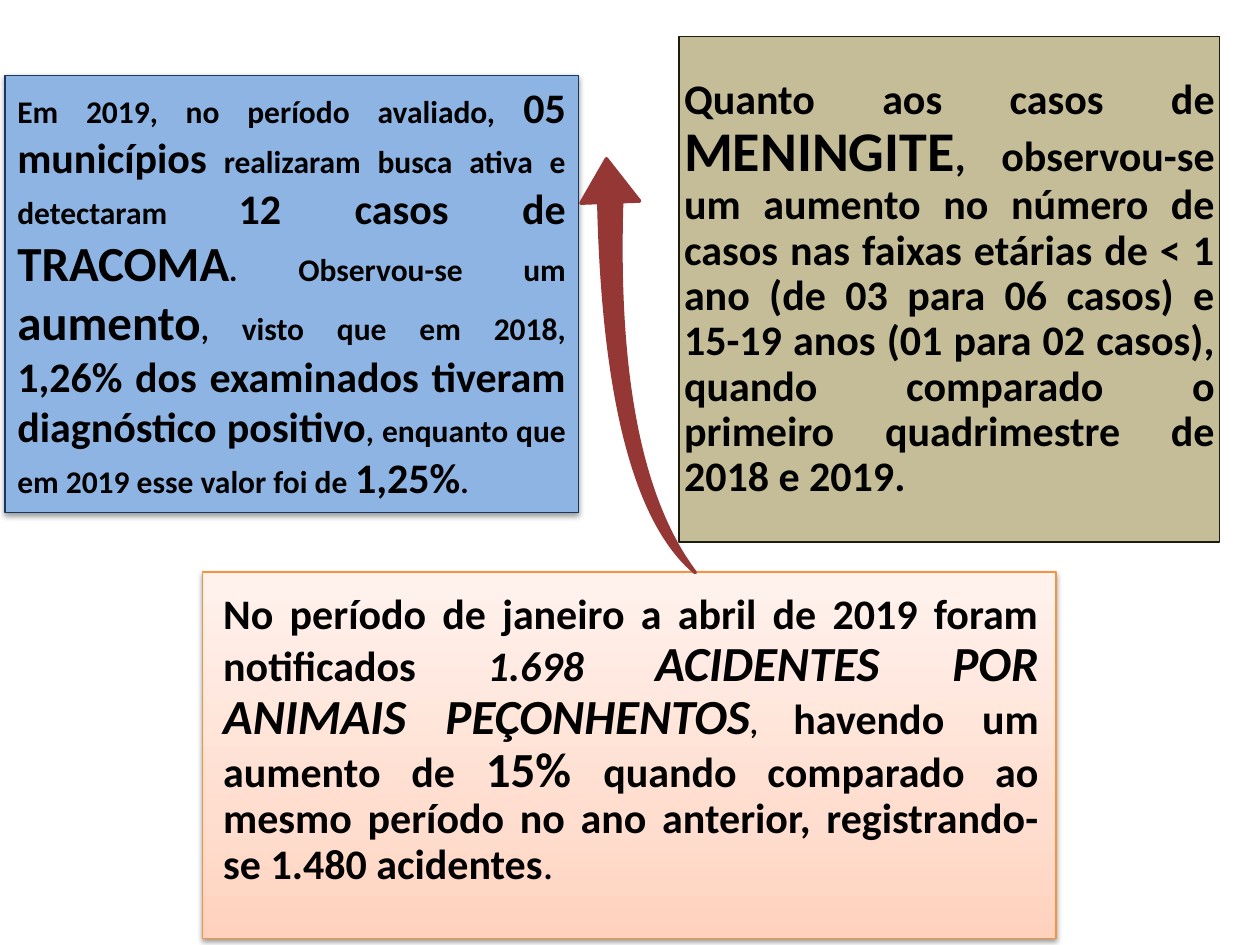
from dataclasses import dataclass
from typing import Optional

from lxml.etree import SubElement
from pptx import Presentation
from pptx.dml.color import RGBColor
from pptx.enum.shapes import MSO_SHAPE as Shape
from pptx.enum.text import MSO_ANCHOR as Anchor, PP_ALIGN as Align
from pptx.oxml.ns import qn
from pptx.util import Cm, Pt

COLORS = {
    "text": "000000",
    "trachoma": "8EB4E3",
    "trachoma_line": "17375E",
    "meningitis": "C4BD97",
    "meningitis_line": "1E1C11",
    "accident_line": "F69240",
    "accident_bottom": "FFD2BD",
    "accident_middle": "FFDED0",
    "accident_top": "FFF2ED",
    "arrow": "953735",
}


@dataclass(frozen=True)
class Area:
    """Position and size in centimetres."""
    left: float
    top: float
    width: float
    height: float

    def lengths(self) -> tuple:
        """Return the four values as lengths."""
        return Cm(self.left), Cm(self.top), Cm(self.width), Cm(self.height)


@dataclass(frozen=True)
class Span:
    """A stretch of text with one format."""
    text: str
    size: int
    bold: bool = True
    italic: bool = False


@dataclass(frozen=True)
class Message:
    """A justified paragraph and its layout."""
    spans: tuple
    anchor: Anchor = Anchor.MIDDLE
    line_spacing: Optional[float] = 0.9
    inset: Optional[float] = None


TRACHOMA = Message((
    Span("Em 2019, no período avaliado, ", 18),
    Span("05 municípios", 24),
    Span(" realizaram busca ativa e detectaram ", 18),
    Span("12 casos de ", 24),
    Span("TRACOMA", 28),
    Span(". Observou-se um ", 18),
    Span("aumento", 28),
    Span(", visto que em 2018, ", 18),
    Span("1,26% dos examinados tiveram diagnóstico positivo", 24),
    Span(", enquanto que em 2019 esse valor foi de ", 18),
    Span("1,25%", 24),
    Span(".", 18),
), Anchor.TOP, None)

ACCIDENTS = Message((
    Span("No período de janeiro a abril de 2019 foram notificados ", 24),
    Span("1.698 ", 24, italic=True),
    Span("ACIDENTES POR ANIMAIS PEÇONHENTOS", 28, italic=True),
    Span(", ", 18),
    Span("havendo um aumento de ", 24),
    Span("15% ", 28),
    Span("quando comparado ao mesmo período no ano anterior, "
         "registrando-se 1.480 acidentes", 24),
    Span(".", 24, bold=False),
), inset=0.05)

MENINGITIS = Message((
    Span("Quanto aos casos de ", 24),
    Span("MENINGITE", 32),
    Span(", observou-se um aumento no número de casos nas faixas etárias "
         "de < 1 ano (de 03 para 06 casos) e 15-19 anos (01 para 02 casos), "
         "quando comparado o primeiro quadrimestre de 2018 e 2019.", 24),
), inset=0.1)


def color(name: str) -> RGBColor:
    """Look up a named colour."""
    return RGBColor.from_string(COLORS[name])


def add_figure(shapes, kind: Shape, area: Area, fill: str, line: str, weight: float = 0.75):
    """Add a filled, outlined shape without shadow."""
    figure = shapes.add_shape(kind, *area.lengths())
    figure.shadow.inherit = False
    figure.fill.solid()
    figure.fill.fore_color.rgb = color(fill)
    figure.line.color.rgb = color(line)
    figure.line.width = Pt(weight)
    return figure


def add_shadow(figure) -> None:
    """Give a shape a soft shadow below it."""
    effects = figure._element.spPr.find(qn("a:effectLst"))
    shadow = SubElement(effects, qn("a:outerShdw"), blurRad="40000", dist="20000",
                        dir="5400000", rotWithShape="0")
    shade = SubElement(shadow, qn("a:srgbClr"), val=COLORS["text"])
    SubElement(shade, qn("a:alpha"), val="38000")


def set_gradient(figure, stops: dict) -> None:
    """Fill a shape with a gradient rising from its bottom edge."""
    figure.fill.gradient()
    figure.fill.gradient_angle = 90
    stop_list = figure._element.spPr.find(qn("a:gradFill")).find(qn("a:gsLst"))
    for stop in list(stop_list):
        stop_list.remove(stop)
    for percent, name in stops.items():
        stop = SubElement(stop_list, qn("a:gs"), pos=str(percent * 1000))
        SubElement(stop, qn("a:srgbClr"), val=COLORS[name])


def write_message(box, message: Message) -> None:
    """Write a justified message into a box."""
    frame = box.text_frame
    frame.word_wrap = True
    frame.vertical_anchor = message.anchor
    if message.inset is not None:
        frame.margin_left = frame.margin_right = Cm(message.inset)
        frame.margin_top = frame.margin_bottom = Cm(message.inset)
    para = frame.paragraphs[0]
    para.alignment = Align.JUSTIFY
    para.line_spacing = message.line_spacing
    for span in message.spans:
        run = para.add_run()
        run.text = span.text
        run.font.name = "Calibri"
        run.font.size = Pt(span.size)
        run.font.bold = span.bold
        run.font.italic = span.italic
        run.font.color.rgb = color("text")


def main() -> None:
    """Build the slide and save the deck."""
    deck = Presentation()
    deck.slide_width, deck.slide_height = Cm(25.4), Cm(19.05)
    page = deck.slides.add_slide(deck.slide_layouts[6])

    trachoma = add_figure(page.shapes, Shape.RECTANGLE, Area(0.1, 1.52, 11.56, 8.81),
                          "trachoma", "trachoma_line")
    add_shadow(trachoma)
    write_message(trachoma, TRACHOMA)

    group = page.shapes.add_group_shape()
    panel = add_figure(group.shapes, Shape.RECTANGLE, Area(4.09, 11.53, 17.2, 7.39),
                       "accident_top", "accident_line")
    set_gradient(panel, {0: "accident_bottom", 35: "accident_middle", 100: "accident_top"})
    add_shadow(panel)
    caption = group.shapes.add_textbox(*Area(4.45, 10.92, 16.54, 8.03).lengths())
    write_message(caption, ACCIDENTS)

    meningitis = add_figure(page.shapes, Shape.RECTANGLE, Area(13.69, 0.74, 10.9, 10.19),
                            "meningitis", "meningitis_line")
    write_message(meningitis, MENINGITIS)

    arrow = add_figure(page.shapes, Shape.SWOOSH_ARROW, Area(8.81, 5.92, 8.18, 2.87),
                       "arrow", "arrow", 2)
    arrow.adjustments[0], arrow.adjustments[1] = 0.16, 0.31
    arrow.rotation = 274.4

    deck.save("out.pptx")


if __name__ == "__main__":
    main()
